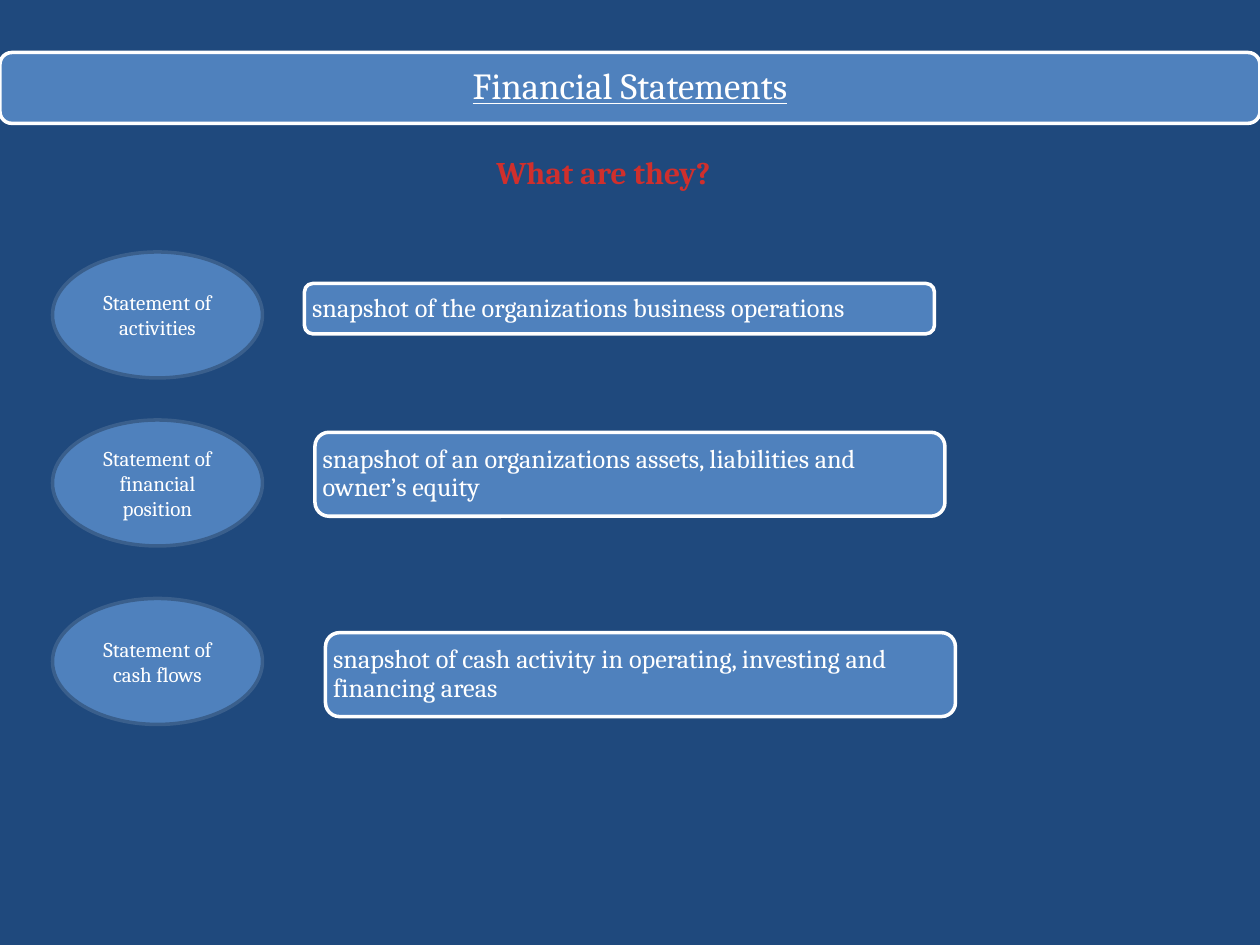
"""Build the Financial Statements slide."""
from dataclasses import dataclass

from pptx import Presentation
from pptx.dml.color import RGBColor
from pptx.enum.shapes import MSO_SHAPE
from pptx.enum.text import MSO_ANCHOR, PP_ALIGN
from pptx.util import Pt


@dataclass(frozen=True)
class Theme:
    font: str = "Cambria"
    background: str = "1F497D"
    fill: str = "4F81BD"
    light: str = "FFFFFF"
    oval_line: str = "3A5F8C"
    accent: str = "D02F2C"
    title_size: float = 21
    question_size: float = 18
    description_size: float = 15
    oval_size: float = 12
    line_width: float = 2


THEME = Theme()
TITLE = "Financial Statements"
QUESTION = "What are they?"
STATEMENTS = [
    ("Statement of activities", 144,
     "snapshot of the organizations business operations", 162, 28.8),
    ("Statement of financial position", 240,
     "snapshot of an organizations assets, liabilities and owner’s equity", 247, 48),
    ("Statement of cash flows", 342,
     "snapshot of cash activity in operating, investing and financing areas", 361.5, 48),
]
OVAL_LEFT, OVAL_WIDTH, OVAL_HEIGHT = 30, 120, 72
DESCRIPTION_LEFT, DESCRIPTION_STEP, DESCRIPTION_WIDTH = 174, 6, 360
CORNER_INSET = 0.05


def write(shape, text, size, color, align, spacing=1.0):
    shape.text_frame.text = text
    paragraph = shape.text_frame.paragraphs[0]
    paragraph.alignment = align
    paragraph.line_spacing = spacing
    paragraph.font.name = THEME.font
    paragraph.font.size = Pt(size)
    paragraph.font.color.rgb = RGBColor.from_string(color)
    return paragraph


def add_panel(slide, kind, box, line_color):
    panel = slide.shapes.add_shape(kind, *map(Pt, box))
    panel.shadow.inherit = False
    panel.fill.solid()
    panel.fill.fore_color.rgb = RGBColor.from_string(THEME.fill)
    panel.line.color.rgb = RGBColor.from_string(line_color)
    panel.line.width = Pt(THEME.line_width)
    panel.text_frame.word_wrap = True
    panel.text_frame.vertical_anchor = MSO_ANCHOR.MIDDLE
    return panel


def add_bar(slide, box, text, size, align, inset):
    bar = add_panel(slide, MSO_SHAPE.ROUNDED_RECTANGLE, box, THEME.light)
    frame = bar.text_frame
    margin = Pt(inset - CORNER_INSET * box[3])
    frame.margin_left = frame.margin_right = margin
    frame.margin_top = frame.margin_bottom = margin
    return write(bar, text, size, THEME.light, align, 0.9)


def main():
    deck = Presentation()
    deck.slide_width, deck.slide_height = Pt(720), Pt(540)
    slide = deck.slides.add_slide(deck.slide_layouts[6])
    slide.background.fill.solid()
    slide.background.fill.fore_color.rgb = RGBColor.from_string(THEME.background)

    title = add_bar(slide, (0, 30, 720, 40.5), TITLE, THEME.title_size,
                    PP_ALIGN.CENTER, 6.3)
    title.font.underline = True

    question = slide.shapes.add_textbox(Pt(276), Pt(84), Pt(137.5), Pt(29))
    question.text_frame.word_wrap = False
    write(question, QUESTION, THEME.question_size, THEME.accent,
          PP_ALIGN.CENTER).font.bold = True

    for index, (name, oval_top, description, top, height) in enumerate(STATEMENTS):
        oval = add_panel(slide, MSO_SHAPE.OVAL,
                         (OVAL_LEFT, oval_top, OVAL_WIDTH, OVAL_HEIGHT),
                         THEME.oval_line)
        write(oval, name, THEME.oval_size, THEME.light, PP_ALIGN.CENTER)
        left = DESCRIPTION_LEFT + index * DESCRIPTION_STEP
        add_bar(slide, (left, top, DESCRIPTION_WIDTH, height), description,
                THEME.description_size, PP_ALIGN.LEFT, 4.5)

    deck.save("out.pptx")


if __name__ == "__main__":
    main()
